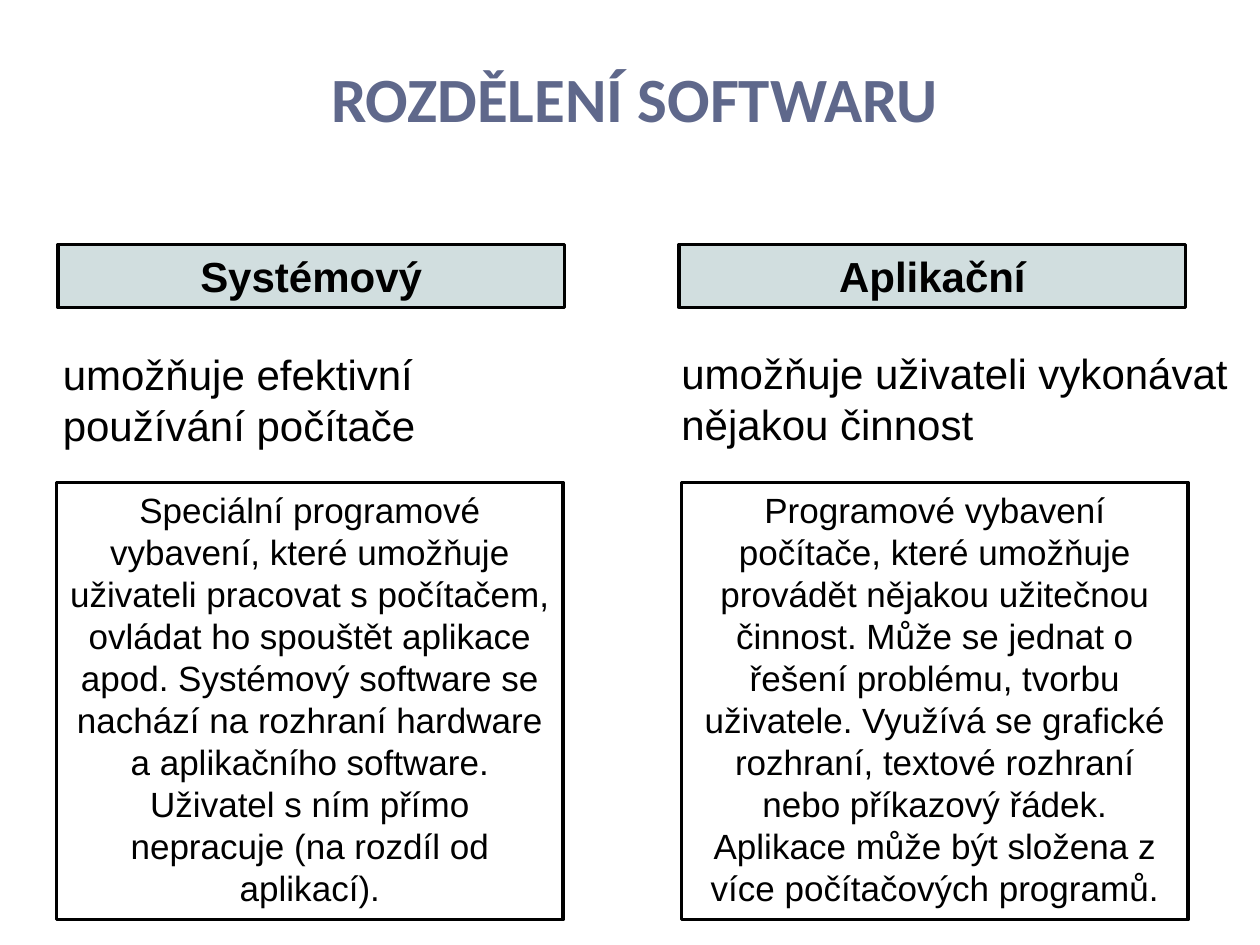
from dataclasses import dataclass
from typing import Optional

from pptx import Presentation
from pptx.dml.color import RGBColor
from pptx.enum.shapes import MSO_SHAPE
from pptx.enum.text import MSO_ANCHOR, MSO_AUTO_SIZE, PP_ALIGN
from pptx.util import Pt

BLACK = RGBColor(0x00, 0x00, 0x00)
WHITE = RGBColor(0xFF, 0xFF, 0xFF)
TITLE_COLOR = RGBColor(0x5F, 0x68, 0x8B)
HEADING_FILL = RGBColor(0xD1, 0xDE, 0xDF)

BOX_WIDTH = 289.4


@dataclass
class Column:
    heading: str
    summary: str
    detail: str
    heading_left: float
    summary_left: float
    summary_top: float
    summary_width: float
    summary_wraps: bool
    detail_left: float


COLUMNS = [
    Column(
        "Systémový",
        "umožňuje efektivní\npoužívání počítače",
        "Speciální programové vybavení, které umožňuje uživateli pracovat "
        "s počítačem, ovládat ho spouštět aplikace apod. Systémový software "
        "se nachází na rozhraní hardware a aplikačního software. Uživatel "
        "s ním přímo nepracuje (na rozdíl od aplikací).",
        33.1, 28.8, 195.8, 224.6, False, 32.4,
    ),
    Column(
        "Aplikační",
        "umožňuje uživateli vykonávat\nnějakou činnost",
        "Programové vybavení počítače, které umožňuje provádět nějakou "
        "užitečnou činnost. Může se jednat o řešení problému, tvorbu "
        "uživatele. Využívá se grafické rozhraní, textové rozhraní nebo "
        "příkazový řádek. Aplikace může být složena z více počítačových "
        "programů.",
        388.1, 382.3, 195.1, 360, True, 389.5,
    ),
]


def write_text(shape, text: str, size: float, align: PP_ALIGN,
               bold: bool = False, color: RGBColor = BLACK,
               font_name: str = "Arial",
               spacing: Optional[Pt] = None) -> None:
    frame = shape.text_frame
    frame.text = text
    frame.word_wrap = True
    frame.vertical_anchor = MSO_ANCHOR.TOP
    for para in frame.paragraphs:
        para.alignment = align
        para.line_spacing = spacing
        for span in para.runs:
            span.font.name = font_name
            span.font.size = Pt(size)
            span.font.bold = bold
            span.font.color.rgb = color


def add_box(page, left: float, top: float, height: float, fill: RGBColor,
            text: str, size: float, bold: bool = False) -> None:
    box = page.shapes.add_shape(MSO_SHAPE.RECTANGLE, Pt(left), Pt(top),
                                Pt(BOX_WIDTH), Pt(height))
    box.shadow.inherit = False
    box.fill.solid()
    box.fill.fore_color.rgb = fill
    box.line.color.rgb = BLACK
    box.line.width = Pt(2)
    write_text(box, text, size, PP_ALIGN.CENTER, bold)


def add_title(page, text: str) -> None:
    box = page.shapes.add_textbox(Pt(31), Pt(31.7), Pt(663.1), Pt(49))
    write_text(box, text, 36, PP_ALIGN.CENTER, True, TITLE_COLOR,
               "Calibri", Pt(20))
    box.text_frame.vertical_anchor = MSO_ANCHOR.BOTTOM


def add_column(page, column: Column) -> None:
    # Heading
    add_box(page, column.heading_left, 139.7, 36, HEADING_FILL,
            column.heading, 24, True)
    # Short summary
    summary = page.shapes.add_textbox(
        Pt(column.summary_left), Pt(column.summary_top),
        Pt(column.summary_width), Pt(65.5))
    write_text(summary, column.summary, 24, PP_ALIGN.LEFT)
    summary.text_frame.word_wrap = column.summary_wraps
    summary.text_frame.auto_size = MSO_AUTO_SIZE.SHAPE_TO_FIT_TEXT
    # Detailed description
    add_box(page, column.detail_left, 275.8, 249.8, WHITE, column.detail, 20)


def main() -> None:
    deck = Presentation()
    deck.slide_width, deck.slide_height = Pt(720), Pt(540)
    page = deck.slides.add_slide(deck.slide_layouts[6])
    add_title(page, "ROZDĚLENÍ SOFTWARU")
    for column in COLUMNS:
        add_column(page, column)
    deck.save("out.pptx")


if __name__ == "__main__":
    main()
